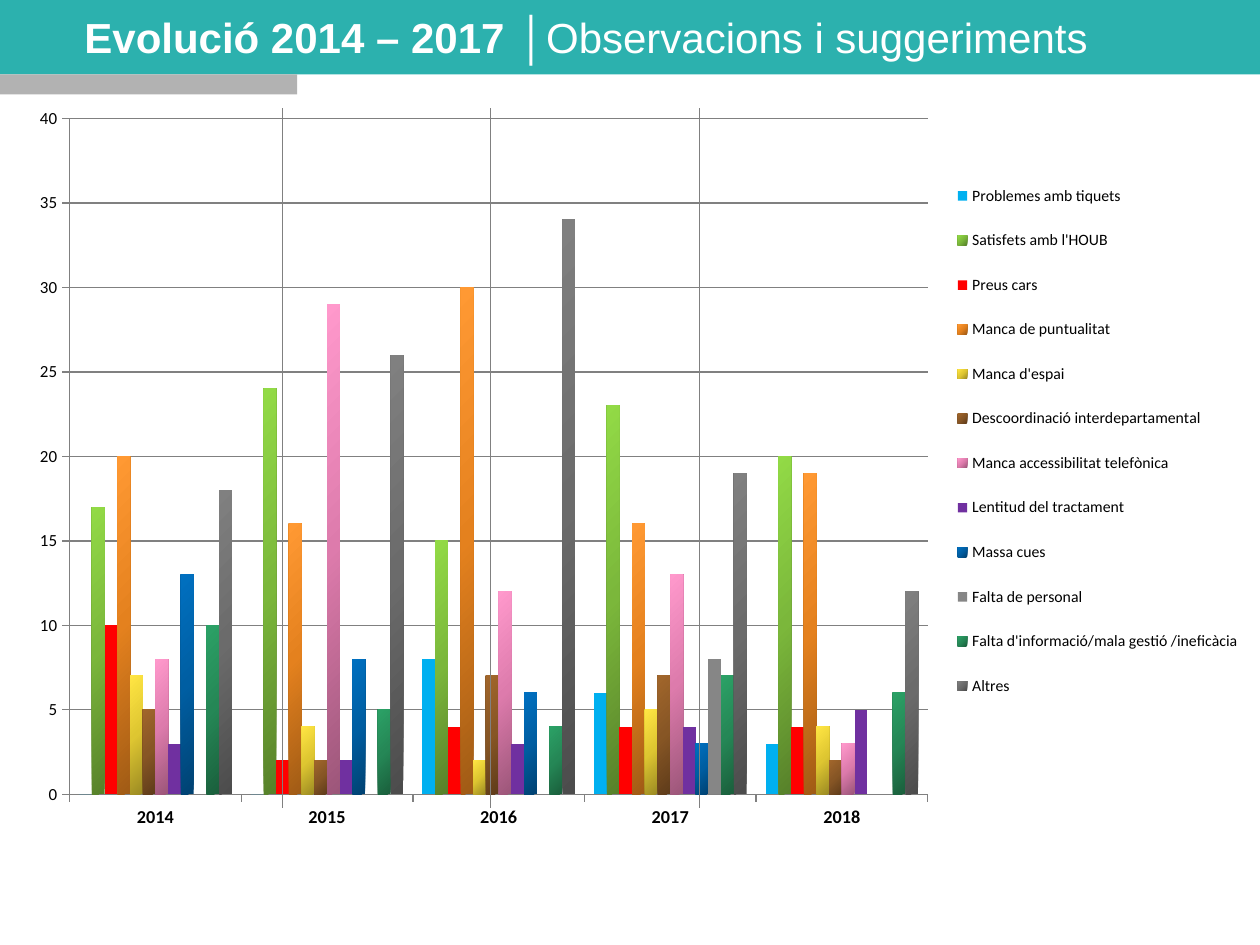
from pptx import Presentation
from pptx.chart.data import CategoryChartData
from pptx.dml.color import RGBColor
from pptx.enum.chart import XL_CHART_TYPE as ChartType, XL_LEGEND_POSITION as LegendPosition, XL_TICK_MARK as TickMark
from pptx.enum.shapes import MSO_CONNECTOR as Connector, MSO_SHAPE as Shape
from pptx.enum.text import MSO_ANCHOR as Anchor, MSO_AUTO_SIZE as AutoSize, PP_ALIGN as Align
from pptx.oxml import parse_xml
from pptx.oxml.ns import nsdecls, qn
from pptx.util import Inches, Pt

COLORS = {"teal": "2CB1AE", "silver": "B2B2B2", "white": "FFFFFF", "black": "000000", "line": "808080"}
TITLE = [
    ("Evolució 2014 – 2017 ", "Arial", True),
    ("│", "Times New Roman", True),
    ("Observacions i suggeriments", "Arial", False),
]
YEARS = ["2014", "2015", "2016", "2017", "2018"]
SERIES = [
    ("Problemes amb tiquets", (0, 0, 8, 6, 3), ["00B0F0"]),
    ("Satisfets amb l'HOUB", (17, 24, 15, 23, 20), ["57812A", "7BB73B", "92DA46"]),
    ("Preus cars", (10, 2, 4, 4, 4), ["FF0000"]),
    ("Manca de puntualitat", (20, 16, 30, 16, 19), ["A05B15", "E4811E", "FF9933"]),
    ("Manca d'espai", (7, 4, 2, 5, 4), ["9C8B23", "DEC631", "FFE543"]),
    ("Descoordinació interdepartamental", (5, 2, 7, 7, 2), ["5F3C1A", "875625", "A1662B"]),
    ("Manca accessibilitat telefònica", (8, 29, 12, 13, 3), ["9C5679", "DD7BAC", "FF99CC"]),
    ("Lentitud del tractament", (3, 2, 3, 4, 5), ["7030A0"]),
    ("Massa cues", (13, 8, 6, 3, None), ["004272", "005EA2", "0070C0"]),
    ("Falta de personal", (0, 0, 0, 8, None), ["868686"]),
    ("Falta d'informació/mala gestió /ineficàcia", (10, 5, 4, 7, 6), ["1A5F3C", "258756", "2BA166"]),
    ("Altres", (18, 26, 34, 19, 12), ["4C4C4C", "6B6B6B", "808080"]),
]
BANNER_HEIGHT = 0.59
BANDS = [
    (0, 0, 10, BANNER_HEIGHT, "teal"),
    (0, BANNER_HEIGHT, 2.36, 0.16, "silver"),
]
CHART_BOX = (0.06, 0.76, 9.87, 6.06)
PLOT_SHARE = (0.05, 0.03, 0.69, 0.885)
LEGEND_SHARE = (0.755, 0.085, 0.243, 0.735)
DIVIDER_LEFT, DIVIDER_STEP, DIVIDER_COUNT = 2.24, 1.655, 3
DIVIDER_TOP, DIVIDER_BOTTOM = 0.86, 6.41


def color(name):
    return RGBColor.from_string(COLORS.get(name, name))


def apply(target, values):
    for name, value in values.items():
        setattr(target, name, value)


def style_font(font, size, bold=False, name="Calibri", fill="black"):
    apply(font, {"size": Pt(size), "bold": bold, "name": name})
    font.color.rgb = color(fill)


def style_line(line):
    line.color.rgb = color("line")
    line.width = Pt(0.75)


def set_layout(element, index, shares, inner=False):
    old = element.find(qn("c:layout"))
    if old is not None:
        element.remove(old)
    target = '<c:layoutTarget val="inner"/>' if inner else ""
    modes = "".join(f'<c:{axis}Mode val="edge"/>' for axis in "xy")
    sizes = "".join(f'<c:{key} val="{share}"/>' for key, share in zip("xywh", shares))
    element.insert(index, parse_xml(
        f'<c:layout {nsdecls("c")}><c:manualLayout>{target}{modes}{sizes}</c:manualLayout></c:layout>'))


def fill_series(series, shades):
    if len(shades) == 1:
        series.format.fill.solid()
        series.format.fill.fore_color.rgb = color(shades[0])
        return
    stops = "".join(
        f'<a:gs pos="{position * 50000}"><a:srgbClr val="{shade}"/></a:gs>'
        for position, shade in enumerate(shades))
    properties = series._element.get_or_add_spPr()
    properties.insert(0, parse_xml(
        f'<a:gradFill {nsdecls("a")} rotWithShape="1"><a:gsLst>{stops}</a:gsLst>'
        '<a:lin ang="13500000" scaled="1"/></a:gradFill>'))


def add_bands(slide):
    for index, (left, top, width, height, fill) in enumerate(BANDS):
        band = slide.shapes.add_shape(Shape.RECTANGLE, *map(Inches, (left, top, width, height)))
        band.shadow.inherit = False
        band.fill.solid()
        band.fill.fore_color.rgb = color(fill)
        band.line.fill.background()
        slide.shapes._spTree.insert(2 + index, band._element)


def add_title(slide):
    title = slide.shapes.title
    apply(title, dict(zip(("left", "top", "width", "height"), map(Inches, (0.67, 0, 9.17, BANNER_HEIGHT)))))
    frame = title.text_frame
    apply(frame, {"margin_left": 0, "margin_top": 0, "margin_right": 0, "margin_bottom": 0,
                  "vertical_anchor": Anchor.MIDDLE, "word_wrap": True, "auto_size": AutoSize.NONE})
    paragraph = frame.paragraphs[0]
    paragraph.alignment = Align.LEFT
    for text, name, bold in TITLE:
        run = paragraph.add_run()
        run.text = text
        style_font(run.font, 24, bold, name, "white")


def add_chart(slide):
    data = CategoryChartData()
    data.categories = YEARS
    for name, values, _ in SERIES:
        data.add_series(name, values)
    chart = slide.shapes.add_chart(ChartType.COLUMN_CLUSTERED, *map(Inches, CHART_BOX), data).chart
    chart.has_title = False
    style_font(chart.font, 13.4, name="Arial")
    plot = chart.plots[0]
    apply(plot, {"gap_width": 150, "overlap": 0, "vary_by_categories": False})
    for series, (_, _, shades) in zip(plot.series, SERIES):
        series.invert_if_negative = False
        fill_series(series, shades)
    for axis, size, bold in ((chart.category_axis, 10.4, True), (chart.value_axis, 9.7, False)):
        axis.major_tick_mark = TickMark.OUTSIDE
        style_font(axis.tick_labels.font, size, bold)
        style_line(axis.format.line)
    apply(chart.value_axis, {"minimum_scale": 0, "maximum_scale": 40, "major_unit": 5,
                             "has_major_gridlines": True})
    style_line(chart.value_axis.major_gridlines.format.line)
    chart.has_legend = True
    apply(chart.legend, {"position": LegendPosition.RIGHT, "include_in_layout": False})
    style_font(chart.legend.font, 9)
    set_layout(chart._chartSpace.chart.plotArea, 0, PLOT_SHARE, inner=True)
    set_layout(chart.legend._element, 1, LEGEND_SHARE)


def add_dividers(slide):
    for index in range(DIVIDER_COUNT):
        left = DIVIDER_LEFT + index * DIVIDER_STEP
        divider = slide.shapes.add_connector(
            Connector.STRAIGHT, *map(Inches, (left, DIVIDER_BOTTOM, left, DIVIDER_TOP)))
        style_line(divider.line)
        divider._element.spPr.append(parse_xml(f'<a:effectLst {nsdecls("a")}/>'))


def main():
    presentation = Presentation()
    apply(presentation, {"slide_width": Inches(10), "slide_height": Inches(7.5)})
    slide = presentation.slides.add_slide(presentation.slide_layouts[5])
    add_bands(slide)
    add_title(slide)
    add_chart(slide)
    add_dividers(slide)
    presentation.save("out.pptx")


if __name__ == "__main__":
    main()
